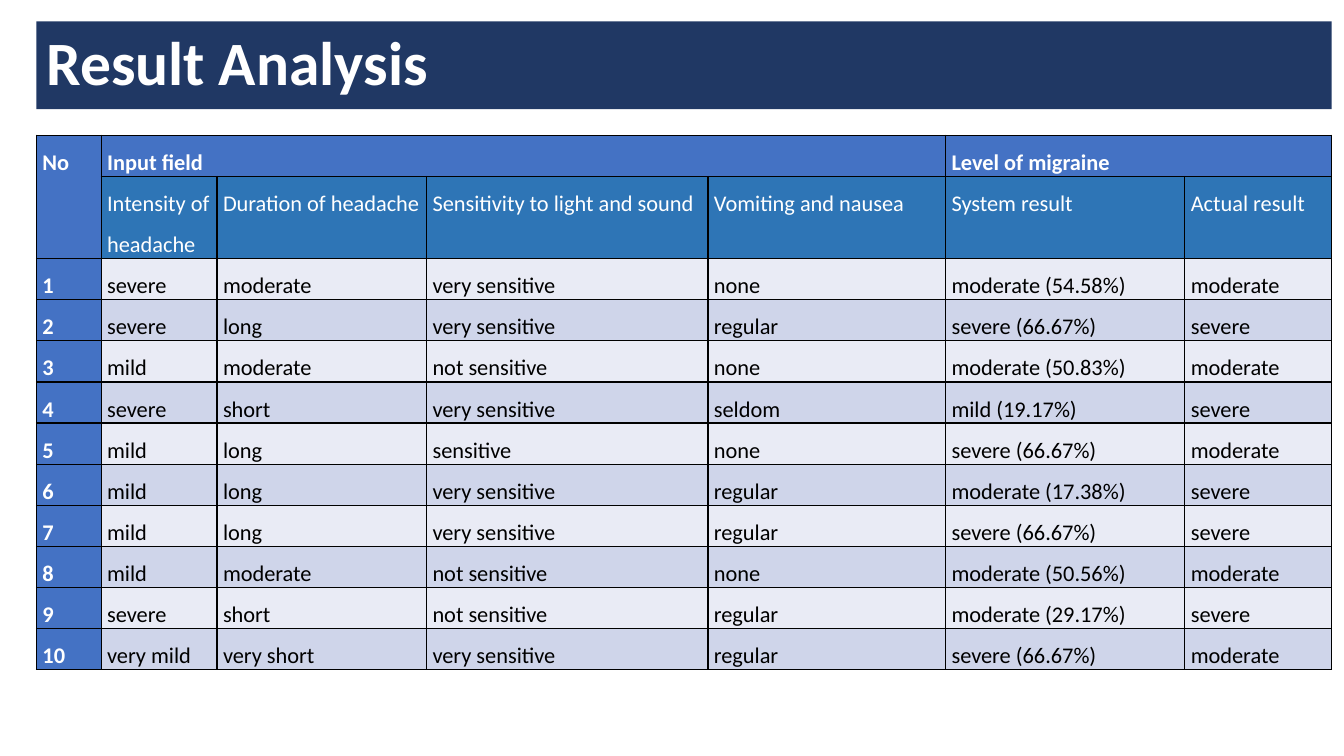
from lxml.etree import SubElement
from pptx import Presentation
from pptx.dml.color import RGBColor
from pptx.enum.shapes import MSO_SHAPE as Shape
from pptx.enum.text import MSO_ANCHOR as Anchor, PP_ALIGN as Align
from pptx.oxml.ns import qn
from pptx.util import Cm, Pt

NAVY, BLUE, STEEL = "203864", "4472C4", "2E75B6"
PALE, LILAC = "E9EBF5", "CFD5EA"
WHITE, BLACK = "FFFFFF", "000000"

LEFT, WIDTH = Cm(0.92), Cm(32.64)
COLUMN_WIDTHS = [1.63, 2.92, 5.28, 7.09, 5.99, 6.03, 3.7]
ROW_HEIGHT = 1.03

ROWS = [
    ["No", "Input field", "", "", "", "Level of migraine", ""],
    ["", "Intensity of headache", "Duration of headache", "Sensitivity to light and sound",
     "Vomiting and nausea", "System result", "Actual result"],
    ["1", "severe", "moderate", "very sensitive", "none", "moderate (54.58%)", "moderate"],
    ["2", "severe", "long", "very sensitive", "regular", "severe (66.67%)", "severe"],
    ["3", "mild", "moderate", "not sensitive", "none", "moderate (50.83%)", "moderate"],
    ["4", "severe", "short", "very sensitive", "seldom", "mild (19.17%)", "severe"],
    ["5", "mild", "long", "sensitive", "none", "severe (66.67%)", "moderate"],
    ["6", "mild", "long", "very sensitive", "regular", "moderate (17.38%)", "severe"],
    ["7", "mild", "long", "very sensitive", "regular", "severe (66.67%)", "severe"],
    ["8", "mild", "moderate", "not sensitive", "none", "moderate (50.56%)", "moderate"],
    ["9", "severe", "short", "not sensitive", "regular", "moderate (29.17%)", "severe"],
    ["10", "very mild", "very short", "very sensitive", "regular", "severe (66.67%)", "moderate"],
]


def paint(color_format, value):
    """Give a fill colour or font colour a hex value."""
    color_format.rgb = RGBColor.from_string(value)


def write(frame, text, size, color, bold, spacing):
    """Put one formatted paragraph in a text frame and return it."""
    frame.text = text
    para = frame.paragraphs[0]
    para.line_spacing = spacing
    font = para.runs[0].font
    font.name, font.size, font.bold = "Calibri", Pt(size), bold
    paint(font.color, color)
    return para


deck = Presentation()
deck.slide_width, deck.slide_height = Cm(33.87), Cm(19.05)
page = deck.slides.add_slide(deck.slide_layouts[6])

# Title bar
title = page.shapes.add_shape(Shape.RECTANGLE, LEFT, Cm(0.54), WIDTH, Cm(2.21))
title.shadow.inherit = False
title.fill.solid()
paint(title.fill.fore_color, NAVY)
title.line.fill.background()
title.text_frame.word_wrap = True
title.text_frame.vertical_anchor = Anchor.MIDDLE
write(title.text_frame, "Result Analysis", 44, WHITE, True, 0.9).alignment = Align.JUSTIFY

# Results table
table = page.shapes.add_table(len(ROWS), len(COLUMN_WIDTHS), LEFT, Cm(3.41),
                              WIDTH, Cm(ROW_HEIGHT * (len(ROWS) + 1))).table
table.first_col = True
for column, width in zip(table.columns, COLUMN_WIDTHS):
    column.width = Cm(width)
for row in table.rows:
    row.height = Cm(ROW_HEIGHT)
table.rows[1].height = Cm(2 * ROW_HEIGHT)

table.cell(0, 0).merge(table.cell(1, 0))
table.cell(0, 1).merge(table.cell(0, 4))
table.cell(0, 5).merge(table.cell(0, 6))

for r, texts in enumerate(ROWS):
    for c, text in enumerate(texts):
        cell = table.cell(r, c)
        cell.margin_left = cell.margin_right = Cm(0.15)
        cell.margin_top = cell.margin_bottom = 0

        for side in ("a:lnL", "a:lnR", "a:lnT", "a:lnB"):
            border = SubElement(cell._tc.get_or_add_tcPr(), qn(side), w=str(Pt(1)))
            SubElement(SubElement(border, qn("a:solidFill")), qn("a:srgbClr"), val=BLACK)

        heading = r == 0 or c == 0
        if heading:
            fill = BLUE
        elif r == 1:
            fill = STEEL
        else:
            fill = LILAC if r % 2 else PALE
        cell.fill.solid()
        paint(cell.fill.fore_color, fill)

        if not cell.is_spanned:
            color = WHITE if heading or r == 1 else BLACK
            write(cell.text_frame, text, 16, color, heading, 1.5)

deck.save("out.pptx")
